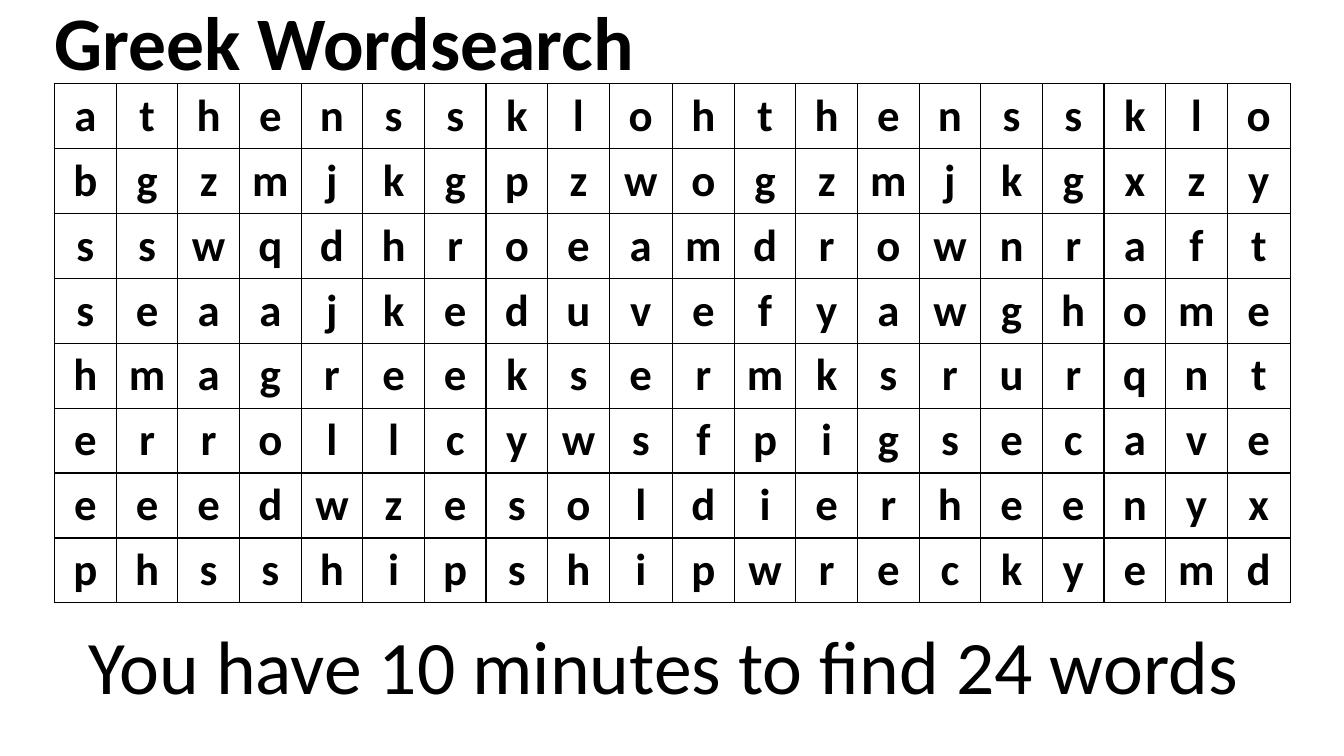
from lxml.etree import SubElement
from pptx import Presentation
from pptx.dml.color import RGBColor
from pptx.enum.text import MSO_AUTO_SIZE, PP_ALIGN
from pptx.oxml import parse_xml
from pptx.oxml.ns import nsdecls, qn
from pptx.util import Pt

COLORS = {"ink": "000000", "outline": "FFFFFF"}
LETTER_FORMAT = {"name": "Calibri", "size": Pt(32), "bold": True}
TITLE_FORMAT = {"name": "Calibri", "size": Pt(54), "bold": True}
TASK_FORMAT = {"name": "Calibri", "size": Pt(54), "bold": False}

GRID_LEFT, GRID_TOP = 39, 59.8
COLUMN_WIDTH, LAST_COLUMN_WIDTH, ROW_HEIGHT = 44.05, 45, 45.65
HALF_COLUMNS = 10
HALF_WIDTH = (HALF_COLUMNS - 1) * COLUMN_WIDTH + LAST_COLUMN_WIDTH
LETTER_ROWS = [
    "athenssklohthenssklo",
    "bgzmjkgpzwogzmjkgxzy",
    "sswqdhroeamdrownraft",
    "seaajkeduvefyawghome",
    "hmagreeksermksrurqnt",
    "errollcywsfpigsecave",
    "eeedwzesoldierheenyx",
    "phsshipshipwreckyemd",
]


def write_centred(text_frame, text, font_format):
    paragraph = text_frame.paragraphs[0]
    paragraph.alignment = PP_ALIGN.CENTER
    run = paragraph.add_run()
    run.text = text
    for attribute, value in font_format.items():
        setattr(run.font, attribute, value)
    run.font.color.rgb = RGBColor.from_string(COLORS["ink"])
    return run


def add_border(cell):
    properties = cell._tc.get_or_add_tcPr()
    for side in ("lnL", "lnR", "lnT", "lnB"):
        line = SubElement(properties, qn(f"a:{side}"), w=str(Pt(1)))
        fill = SubElement(line, qn("a:solidFill"))
        SubElement(fill, qn("a:srgbClr"), val=COLORS["ink"])


presentation = Presentation()
presentation.slide_width = Pt(960)
presentation.slide_height = Pt(540)
slide = presentation.slides.add_slide(presentation.slide_layouts[6])

# Letter grid: two tables side by side
for half in range(2):
    table = slide.shapes.add_table(
        len(LETTER_ROWS), HALF_COLUMNS,
        Pt(GRID_LEFT + half * HALF_WIDTH), Pt(GRID_TOP),
        Pt(HALF_WIDTH), Pt(len(LETTER_ROWS) * ROW_HEIGHT),
    ).table
    table.first_row = False
    table.horz_banding = False
    for column in table.columns:
        column.width = Pt(COLUMN_WIDTH)
    table.columns[HALF_COLUMNS - 1].width = Pt(LAST_COLUMN_WIDTH)
    for row_index, letters in enumerate(LETTER_ROWS):
        table.rows[row_index].height = Pt(ROW_HEIGHT)
        half_letters = letters[half * HALF_COLUMNS:(half + 1) * HALF_COLUMNS]
        for column_index, letter in enumerate(half_letters):
            cell = table.cell(row_index, column_index)
            add_border(cell)
            cell.fill.background()
            write_centred(cell.text_frame, letter, LETTER_FORMAT)

# Title with a thin white outline
title = slide.shapes.add_textbox(Pt(29.5), Pt(-7.2), Pt(432.7), Pt(72.7))
title.text_frame.word_wrap = False
title.text_frame.auto_size = MSO_AUTO_SIZE.SHAPE_TO_FIT_TEXT
title_run = write_centred(title.text_frame, "Greek Wordsearch", TITLE_FORMAT)
title_run.font._element.insert(0, parse_xml(
    f'<a:ln {nsdecls("a")} w="{Pt(0.75)}"><a:solidFill>'
    f'<a:srgbClr val="{COLORS["outline"]}"/></a:solidFill></a:ln>'
))

# Task line
task = slide.shapes.add_textbox(Pt(0), Pt(438.5), Pt(960), Pt(72.7))
task.text_frame.word_wrap = True
task.text_frame.auto_size = MSO_AUTO_SIZE.SHAPE_TO_FIT_TEXT
write_centred(task.text_frame, "You have 10 minutes to find 24 words ", TASK_FORMAT)

presentation.save("out.pptx")
